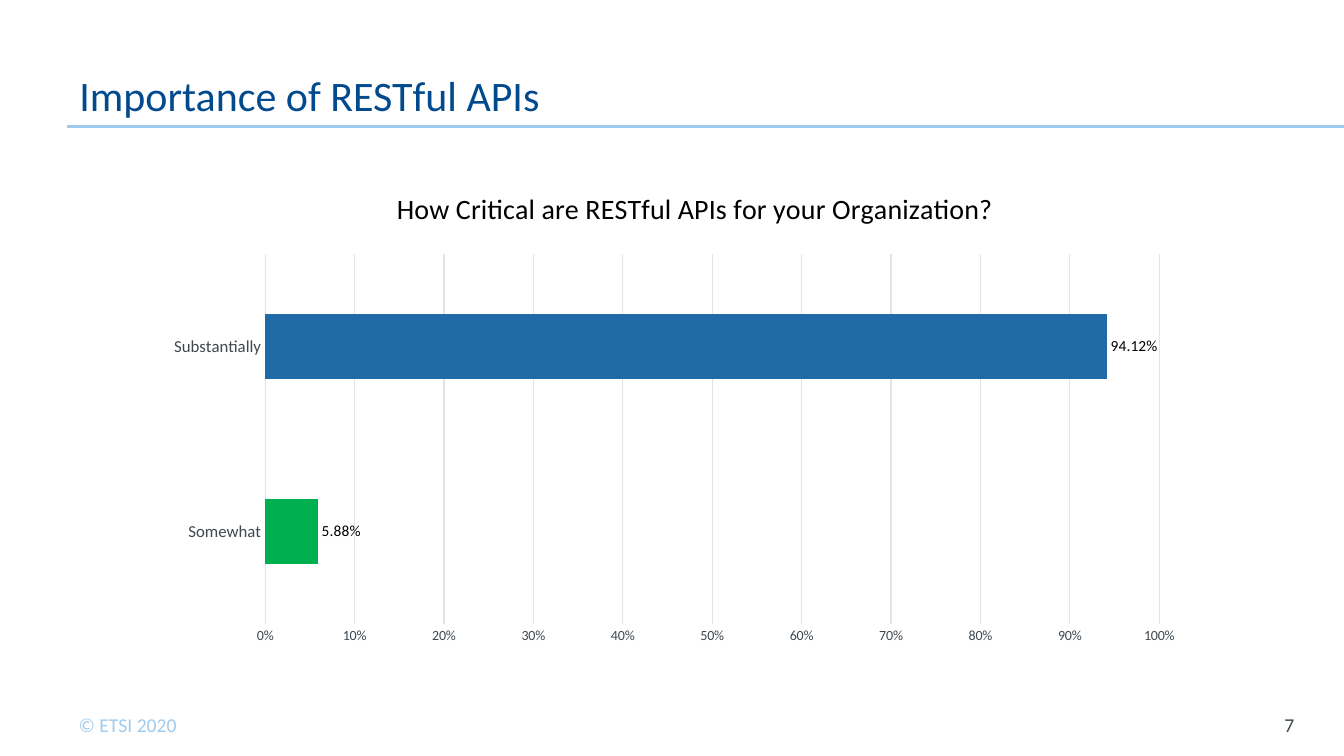
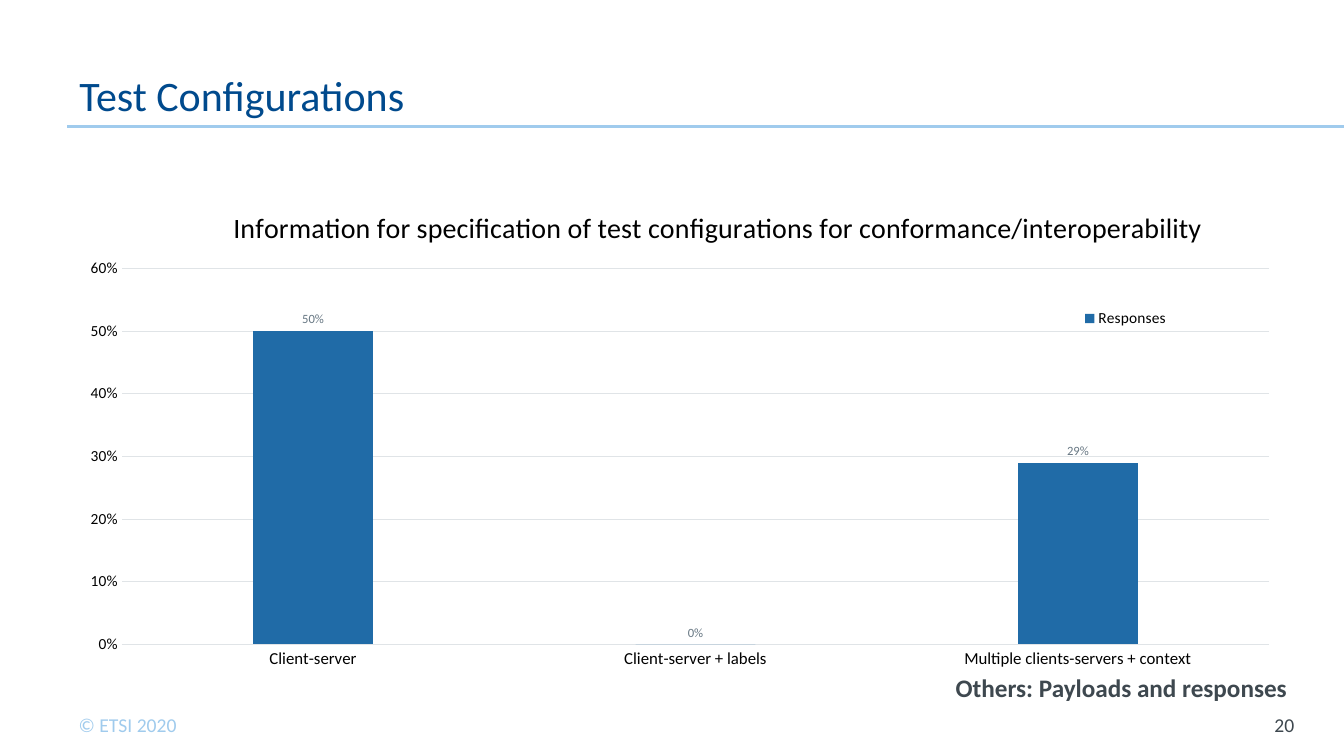
from pptx import Presentation
from pptx import util as u
from pptx.chart.data import CategoryChartData
from pptx.dml.color import RGBColor
from pptx.enum import chart as charts, shapes, text
from pptx.oxml import parse_xml
from pptx.oxml.ns import nsdecls, qn

Cm, Pt = u.Cm, u.Pt

FONT = "Calibri"
NAVY = RGBColor(0x00, 0x4A, 0x8D)
SKY = RGBColor(0xA0, 0xCB, 0xED)
SLATE = RGBColor(0x3E, 0x48, 0x4F)
GREY = RGBColor(0x67, 0x77, 0x83)
PALE = RGBColor(0xE0, 0xE4, 0xE7)
BLUE = RGBColor(0x20, 0x6B, 0xA7)
GREEN = RGBColor(0x00, 0xB0, 0x50)
BLACK = RGBColor(0x00, 0x00, 0x00)

WIDTH, HEIGHT = 33.87, 19.05
RULE_LEFT, RULE_TOP = 1.7, 3.18
COPYRIGHT = "© ETSI 2020"

SLIDES = [
    {
        "title": "Importance of RESTful APIs",
        "number": 7,
        "chart": {
            "kind": charts.XL_CHART_TYPE.BAR_CLUSTERED,
            "box": (3.86, 3.86, 26.14, 12.75),
            "title": "How Critical are RESTful APIs for your Organization?",
            "title_at": (0.23, 0.06),
            "plot_at": (0.108, 0.2, 0.862, 0.73),
            "series": "Series 1",
            "values": {"Somewhat": 0.0588, "Substantially": 0.9412},
            "point_colors": {0: GREEN},
            "maximum": 1,
            "gap": 182,
            "overlap": 0,
            "category_font": (12, SLATE),
            "value_font": (10, SLATE),
            "label_font": (11, BLACK),
            "label_format": "0.00%",
        },
    },
    {
        "title": "Test Configurations",
        "number": 20,
        "note": "Others: Payloads and responses",
        "chart": {
            "kind": charts.XL_CHART_TYPE.COLUMN_CLUSTERED,
            "box": (1.7, 4.45, 31.19, 13),
            "title": "Information for specification of test configurations"
                     " for conformance/interoperability",
            "title_at": (0.13, 0.05),
            "plot_at": (0.044, 0.178, 0.927, 0.729),
            "legend_at": (0.81, 0.24, 0.09, 0.07),
            "series": "Responses",
            "values": {
                "Client-server": 0.5,
                "Client-server + labels": 0,
                "Multiple clients-servers + context": 0.29,
            },
            "point_colors": {},
            "maximum": 0.6,
            "gap": 219,
            "overlap": -27,
            "category_font": (12, BLACK),
            "value_font": (11, BLACK),
            "label_font": (9, GREY),
            "label_format": "0%",
        },
    },
]


def set_font(font, size, color, bold=False):
    font.name = FONT
    font.size = Pt(size)
    font.bold = bold
    font.color.rgb = color


def add_text(slide, content, box, *, size, color, bold=False, wrap=True,
             align=text.PP_ALIGN.LEFT, anchor=text.MSO_ANCHOR.TOP,
             insets=(0.25, 0.13, 0.25, 0.13), line_spacing=None):
    shape = slide.shapes.add_textbox(*map(Cm, box))
    frame = shape.text_frame
    frame.word_wrap = wrap
    frame.vertical_anchor = anchor
    (frame.margin_left, frame.margin_top,
     frame.margin_right, frame.margin_bottom) = map(Cm, insets)
    paragraph = frame.paragraphs[0]
    paragraph.alignment = align
    if line_spacing:
        paragraph.line_spacing = Pt(line_spacing)
    run = paragraph.add_run()
    run.text = content
    set_font(run.font, size, color, bold)


def set_layout(element, index, position, inner=False):
    for layout in element.findall(qn("c:layout")):
        element.remove(layout)
    target = '<c:layoutTarget val="inner"/>' if inner else ""
    modes = "".join(f'<c:{axis}Mode val="edge"/>' for axis in "xy")
    sizes = "".join(f'<c:{key} val="{value}"/>' for key, value in zip("xywh", position))
    element.insert(index, parse_xml(
        f'<c:layout {nsdecls("c")}><c:manualLayout>{target}{modes}{sizes}'
        '</c:manualLayout></c:layout>'))


def style_axes(chart, content):
    category, value = chart.category_axis, chart.value_axis
    for axis, key in ((category, "category_font"), (value, "value_font")):
        axis.major_tick_mark = axis.minor_tick_mark = charts.XL_TICK_MARK.NONE
        set_font(axis.tick_labels.font, *content[key])
    value.minimum_scale, value.maximum_scale = 0, content["maximum"]
    value.major_unit = 0.1
    value.tick_labels.number_format = "0%"
    value.tick_labels.number_format_is_linked = False
    value.has_major_gridlines = True
    value.format.line.fill.background()
    for line in (category.format.line, value.major_gridlines.format.line):
        line.color.rgb = PALE
        line.width = Pt(0.75)


def style_bars(chart, content):
    plot = chart.plots[0]
    plot.vary_by_categories = False
    plot.gap_width, plot.overlap = content["gap"], content["overlap"]
    series = plot.series[0]
    series.format.fill.solid()
    series.format.fill.fore_color.rgb = BLUE
    for index, color in content["point_colors"].items():
        fill = series.points[index].format.fill
        fill.solid()
        fill.fore_color.rgb = color
    labels = series.data_labels
    labels.show_value = True
    labels.position = charts.XL_LABEL_POSITION.OUTSIDE_END
    labels.number_format = content["label_format"]
    labels.number_format_is_linked = False
    set_font(labels.font, *content["label_font"])


def add_bar_chart(slide, content):
    data = CategoryChartData(number_format="0.00%")
    data.categories = list(content["values"])
    data.add_series(content["series"], list(content["values"].values()))
    chart = slide.shapes.add_chart(
        content["kind"], *map(Cm, content["box"]), data).chart
    set_font(chart.font, 10, SLATE)
    chart.has_title = True
    paragraph = chart.chart_title.text_frame.paragraphs[0]
    run = paragraph.add_run()
    run.text = content["title"]
    set_font(run.font, 20, BLACK)
    set_layout(chart.chart_title._element, 1, content["title_at"])
    set_layout(chart._chartSpace.chart.plotArea, 0, content["plot_at"], inner=True)
    style_axes(chart, content)
    style_bars(chart, content)
    chart.has_legend = "legend_at" in content
    if chart.has_legend:
        legend = chart.legend
        legend.position = charts.XL_LEGEND_POSITION.RIGHT
        legend.include_in_layout = False
        set_font(legend.font, 11, BLACK)
        set_layout(legend._element, 1, content["legend_at"])


def add_frame(slide, title, number):
    rule = slide.shapes.add_connector(
        shapes.MSO_CONNECTOR.STRAIGHT,
        Cm(RULE_LEFT), Cm(RULE_TOP), Cm(WIDTH), Cm(RULE_TOP))
    rule.line.color.rgb = SKY
    rule.line.width = Pt(2.25)
    rule._element.spPr.append(parse_xml(f'<a:effectLst {nsdecls("a")}/>'))
    add_text(slide, COPYRIGHT, (1.73, 17.83, 3.4, 0.86),
             size=14, color=SKY, wrap=False)
    add_text(slide, str(number), (31.12, 17.75, 1.75, 1.02),
             size=14, color=SLATE, align=text.PP_ALIGN.RIGHT,
             anchor=text.MSO_ANCHOR.MIDDLE, insets=(0, 0.13, 0.25, 0.13))
    add_text(slide, title, (RULE_LEFT, 0.76, 26.47, 2.41),
             size=30, color=NAVY, anchor=text.MSO_ANCHOR.BOTTOM,
             insets=(0.3, 0.15, 0.3, 0.15), line_spacing=30)


def main():
    presentation = Presentation()
    presentation.slide_width, presentation.slide_height = Cm(WIDTH), Cm(HEIGHT)
    for content in SLIDES:
        slide = presentation.slides.add_slide(presentation.slide_layouts[6])
        add_frame(slide, content["title"], content["number"])
        add_bar_chart(slide, content["chart"])
        if "note" in content:
            add_text(slide, content["note"], (23.77, 16.81, 8.92, 1.02),
                     size=18, color=SLATE, bold=True, wrap=False,
                     align=text.PP_ALIGN.RIGHT)
    presentation.save("out.pptx")


if __name__ == "__main__":
    main()
